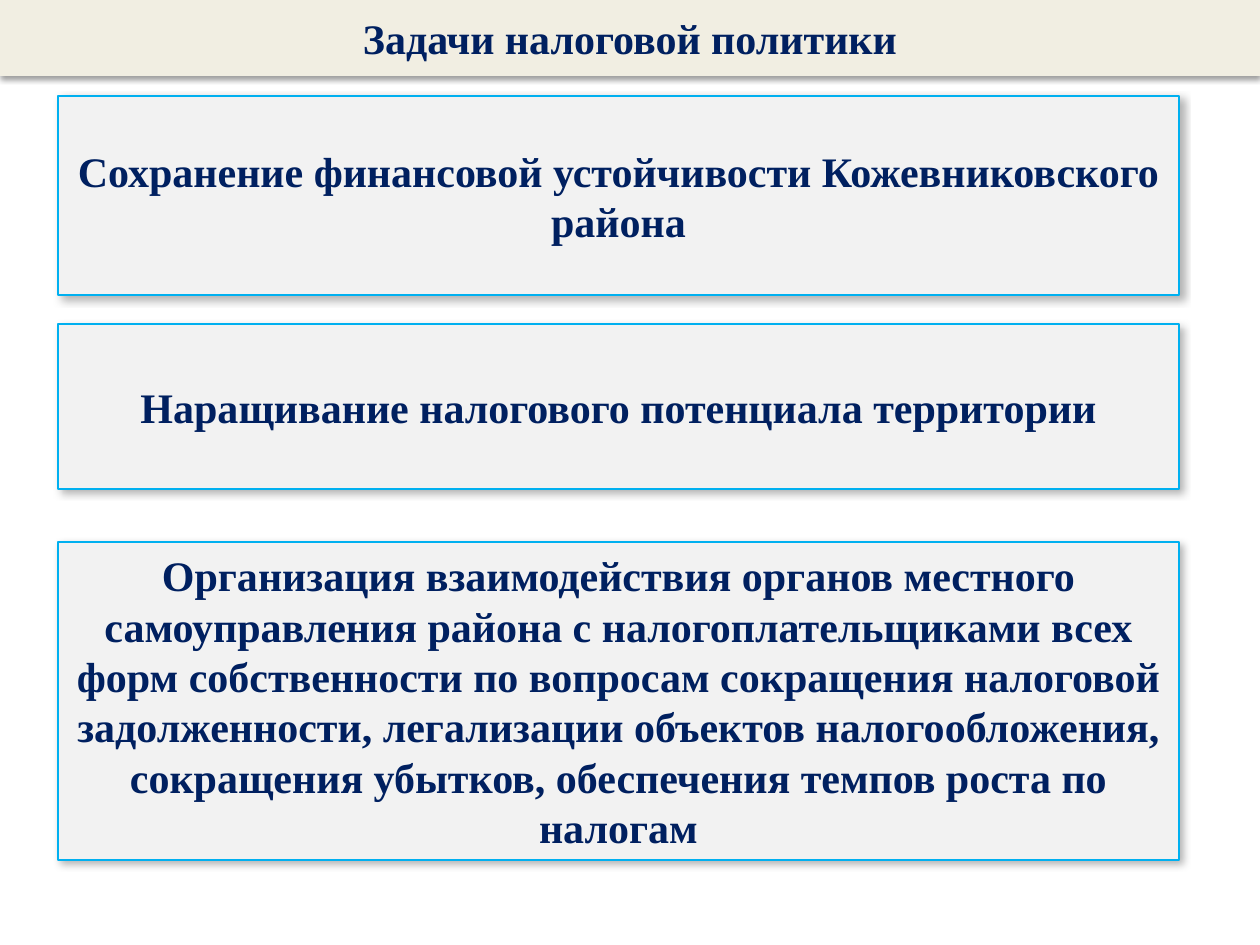
from lxml.etree import SubElement
from pptx import Presentation
from pptx.dml.color import RGBColor
from pptx.enum.shapes import MSO_SHAPE
from pptx.enum.text import MSO_ANCHOR, PP_ALIGN
from pptx.oxml.ns import qn
from pptx.util import Emu, Pt

COLORS = {"title": "F1EEE2", "box": "F2F2F2", "border": "00B0F0",
          "text": "002060", "shadow": "000000"}
TITLE_SHADOW = (38, 3.1, 2, 90)  # opacity %, blur pt, distance pt, angle
BOX_SHADOW = (30, 4.5, 2.6, 53)


def px(length):
    return Emu(round(length * 914400 / 126))


def add_panel(slide, left, top, width, height, fill, shadow, text):
    shape = slide.shapes.add_shape(
        MSO_SHAPE.RECTANGLE, px(left), px(top), px(width), px(height))
    shape.fill.solid()
    shape.fill.fore_color.rgb = RGBColor.from_string(COLORS[fill])
    shape.line.fill.background()

    # Outer shadow
    shape.shadow.inherit = False
    opacity, blur, distance, angle = shadow
    effects = shape._element.spPr.find(qn("a:effectLst"))
    outer = SubElement(effects, qn("a:outerShdw"), blurRad=str(Pt(blur)),
                       dist=str(Pt(distance)), dir=str(angle * 60000),
                       algn="ctr", rotWithShape="0")
    color = SubElement(outer, qn("a:srgbClr"), val=COLORS["shadow"])
    SubElement(color, qn("a:alpha"), val=str(opacity * 1000))

    # Centred text
    frame = shape.text_frame
    frame.word_wrap = True
    frame.vertical_anchor = MSO_ANCHOR.MIDDLE
    paragraph = frame.paragraphs[0]
    paragraph.alignment = PP_ALIGN.CENTER
    run = paragraph.add_run()
    run.text = text
    run.font.name = "Times New Roman"
    run.font.size = Pt(24)
    run.font.bold = True
    run.font.color.rgb = RGBColor.from_string(COLORS["text"])
    return shape


presentation = Presentation()
presentation.slide_width = px(1260)
presentation.slide_height = px(945)
slide = presentation.slides.add_slide(presentation.slide_layouts[6])

# Title band
add_panel(slide, 0, 0, 1260, 76, "title", TITLE_SHADOW,
          "Задачи налоговой политики")

# Tax policy tasks: top, height, text
tasks = [
    (96, 199, "Сохранение финансовой устойчивости Кожевниковского района"),
    (324, 165, "Наращивание налогового потенциала территории"),
    (542, 318, "Организация взаимодействия органов местного самоуправления "
               "района с налогоплательщиками всех форм собственности по "
               "вопросам сокращения налоговой задолженности, легализации "
               "объектов налогообложения, сокращения убытков, обеспечения "
               "темпов роста по налогам"),
]
for top, height, text in tasks:
    box = add_panel(slide, 58, top, 1121, height, "box", BOX_SHADOW, text)
    box.line.color.rgb = RGBColor.from_string(COLORS["border"])
    box.line.width = Pt(0.75)

presentation.save("out.pptx")
